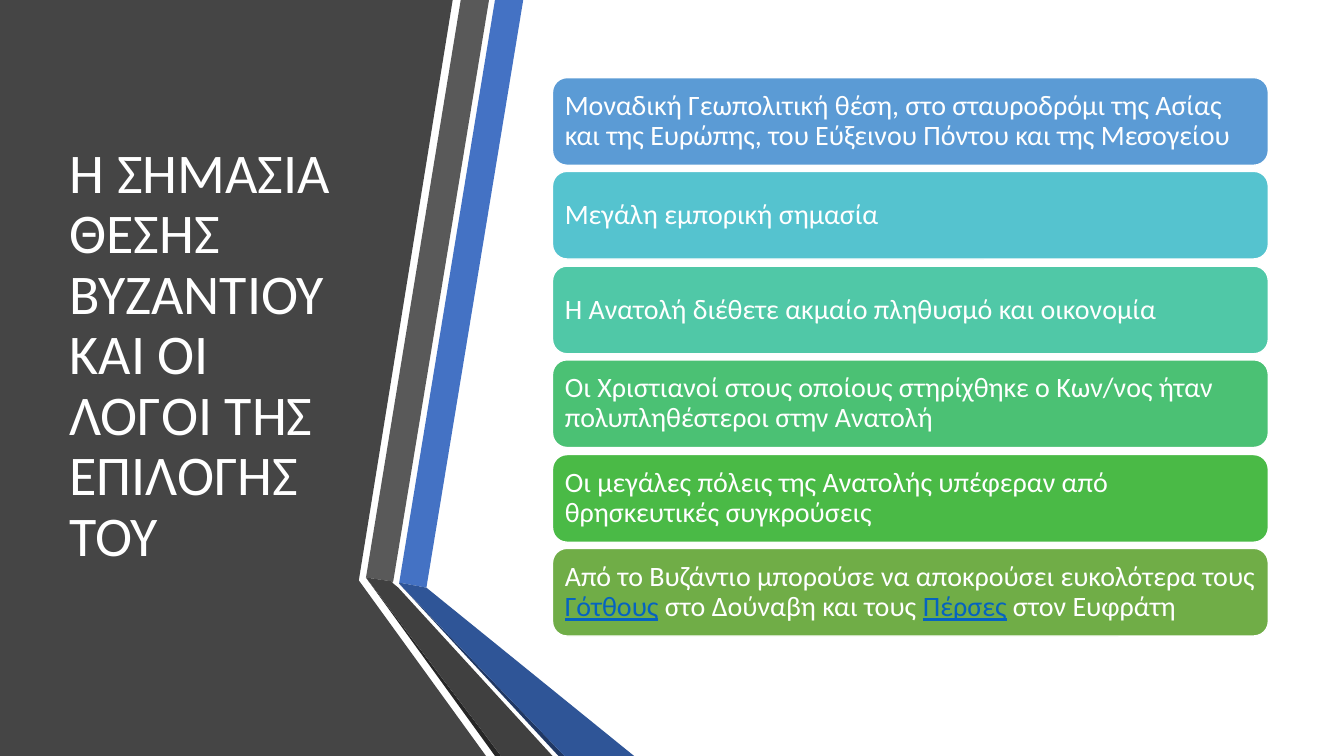
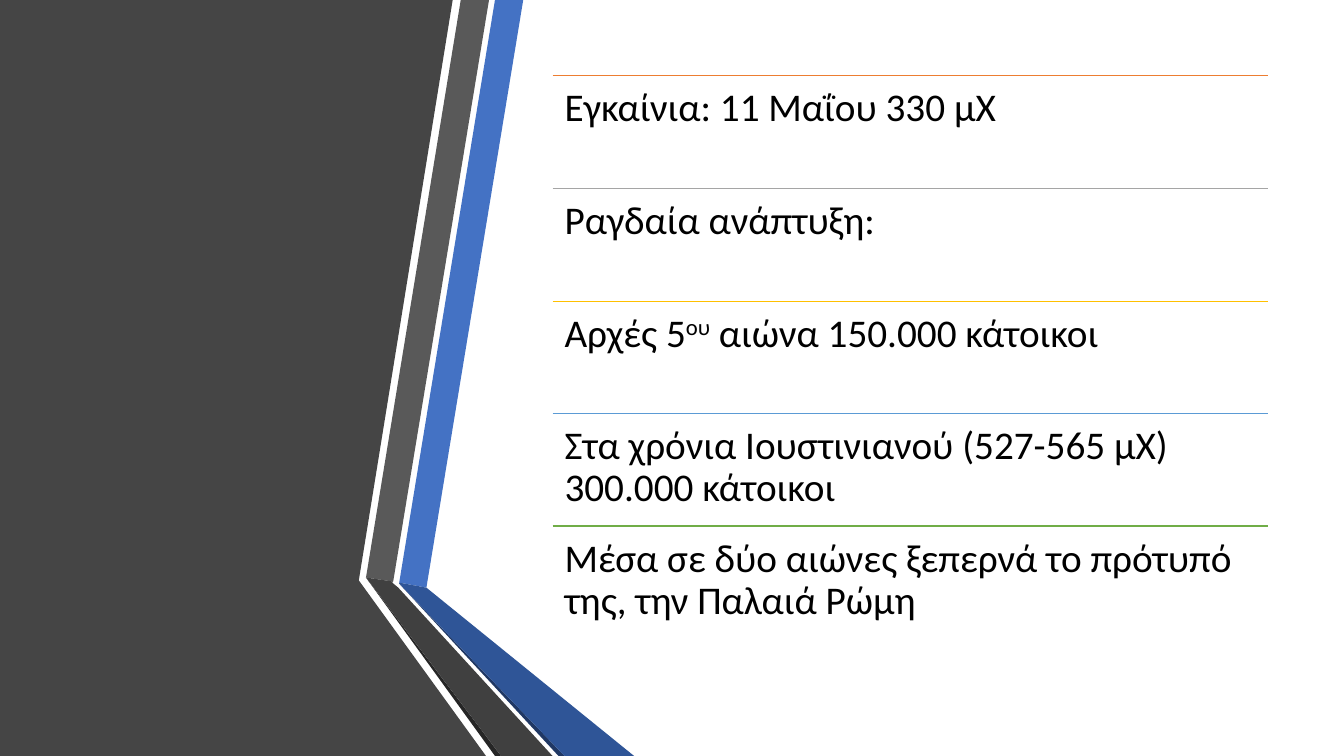
from lxml.etree import SubElement
from pptx import Presentation
from pptx.dml.color import RGBColor
from pptx.enum.shapes import MSO_CONNECTOR, MSO_SHAPE
from pptx.enum.text import MSO_ANCHOR, MSO_AUTO_SIZE, PP_ALIGN
from pptx.oxml.ns import qn
from pptx.util import Pt

PX = 9144
WIDTH, HEIGHT = 1333, 750
TITLE_ONLY, BLANK = 5, 6
FONT = "Calibri"

WHITE = RGBColor(0xFF, 0xFF, 0xFF)
BLACK = RGBColor(0x00, 0x00, 0x00)
CHARCOAL = RGBColor(0x45, 0x45, 0x45)
GRAY = RGBColor(0x59, 0x59, 0x59)
DARK_GRAY = RGBColor(0x40, 0x40, 0x40)
SHADE_GRAY = RGBColor(0x26, 0x26, 0x26)
ROYAL = RGBColor(0x44, 0x72, 0xC4)
DARK_ROYAL = RGBColor(0x2F, 0x55, 0x97)
SHADE_ROYAL = RGBColor(0x20, 0x38, 0x64)
SKY = RGBColor(0x5B, 0x9B, 0xD5)
TURQUOISE = RGBColor(0x55, 0xC3, 0xCF)
MINT = RGBColor(0x50, 0xC8, 0xA7)
EMERALD = RGBColor(0x4B, 0xC1, 0x74)
GREEN = RGBColor(0x4A, 0xBA, 0x46)
OLIVE = RGBColor(0x70, 0xAD, 0x47)
ORANGE = RGBColor(0xED, 0x7D, 0x31)
SILVER = RGBColor(0xA5, 0xA5, 0xA5)
GOLD = RGBColor(0xFF, 0xC0, 0x00)
LINK = RGBColor(0x05, 0x63, 0xC1)

BAND = [
    (CHARCOAL, [(0, 0), (449, 0), (356, 575), (356, 576), (482, 750), (0, 750)]),
    (ROYAL, [(396, 578), (423, 583), (519, 0), (491, 0)]),
    (GRAY, [(485, 0), (457, 0), (363, 573), (390, 577)]),
    (SHADE_GRAY, [(363, 573), (491, 750), (497, 750)]),
    (SHADE_ROYAL, [(396, 579), (554, 750), (560, 750)]),
    (DARK_ROYAL, [(396, 579), (560, 750), (629, 750), (423, 583), (396, 578)]),
    (DARK_GRAY, [(548, 750), (395, 583), (389, 578), (390, 577), (363, 573), (497, 750)]),
]

TITLE = "Η ΣΗΜΑΣΙΑ ΘΕΣΗΣ ΒΥΖΑΝΤΙΟΥ ΚΑΙ ΟΙ ΛΟΓΟΙ ΤΗΣ ΕΠΙΛΟΓΗΣ ΤΟΥ"

REASONS = [
    (SKY, ["Μοναδική Γεωπολιτική θέση, στο σταυροδρόμι της Ασίας και της Ευρώπης, "
           "του Εύξεινου Πόντου και της Μεσογείου"]),
    (TURQUOISE, ["Μεγάλη εμπορική σημασία"]),
    (MINT, ["Η Ανατολή διέθετε ακμαίο πληθυσμό και οικονομία"]),
    (EMERALD, ["Οι Χριστιανοί στους οποίους στηρίχθηκε ο Κων/νος ήταν "
               "πολυπληθέστεροι στην Ανατολή"]),
    (GREEN, ["Οι μεγάλες πόλεις της Ανατολής υπέφεραν από θρησκευτικές συγκρούσεις"]),
    (OLIVE, ["Από το Βυζάντιο μπορούσε να αποκρούσει ευκολότερα τους ",
             ("Γότθους", "link"), " στο Δούναβη και τους ",
             ("Πέρσες", "link"), " στον Ευφράτη"]),
]

GROWTH = [
    (ORANGE, ["Εγκαίνια: 11 Μαΐου 330 μΧ"]),
    (SILVER, ["Ραγδαία ανάπτυξη:"]),
    (GOLD, ["Αρχές 5", ("ου", "super"), " αιώνα 150.000 κάτοικοι"]),
    (SKY, ["Στα χρόνια Ιουστινιανού (527-565 μΧ) 300.000 κάτοικοι"]),
    (OLIVE, ["Μέσα σε δύο αιώνες ξεπερνά το πρότυπό της, την Παλαιά Ρώμη"]),
]


def spread(first, last, items):
    step = (last - first) / (len(items) - 1)
    return [(first + round(i * step), *item) for i, item in enumerate(items)]


class Deck:
    def __init__(self):
        self.prs = Presentation()
        self.prs.slide_width, self.prs.slide_height = WIDTH * PX, HEIGHT * PX
        self.s = None

    def slide(self, layout):
        self.s = self.prs.slides.add_slide(self.prs.slide_layouts[layout])
        for color, points in BAND:
            self.outline(color, points)

    def outline(self, color, points):
        builder = self.s.shapes.build_freeform(*points[0], scale=PX)
        builder.add_line_segments(points[1:], close=True)
        sp = builder.convert_to_shape()
        sp.shadow.inherit = False
        sp.fill.solid()
        sp.fill.fore_color.rgb = color
        sp.line.fill.background()

    def set_text(self, sp, parts, size, color, inset, anchor):
        tf = sp.text_frame
        tf.word_wrap = True
        tf.auto_size = MSO_AUTO_SIZE.NONE
        tf.vertical_anchor = anchor
        tf.margin_left = tf.margin_right = tf.margin_top = tf.margin_bottom = inset * PX
        p = tf.paragraphs[0]
        p.alignment = PP_ALIGN.LEFT
        p.line_spacing = 0.9
        p.font.name, p.font.size = FONT, Pt(size)
        p.font.color.rgb = color
        for part in parts:
            text, style = (part, None) if isinstance(part, str) else part
            r = p.add_run()
            r.text = text
            if style == "link":
                r.font.color.rgb = LINK
                r.font.underline = True
            elif style == "super":
                r._r.get_or_add_rPr().set("baseline", "30000")

    def title(self, text, x, y, w, h):
        sp = self.s.shapes.title
        self.s.shapes._spTree.append(sp._element)
        sp.left, sp.top, sp.width, sp.height = x * PX, y * PX, w * PX, h * PX
        self.set_text(sp, [text], 40, WHITE, 10, MSO_ANCHOR.MIDDLE)

    def card(self, color, parts, x, y, w, h):
        sp = self.s.shapes.add_shape(
            MSO_SHAPE.ROUNDED_RECTANGLE, x * PX, y * PX, w * PX, h * PX)
        sp.shadow.inherit = False
        sp.fill.solid()
        sp.fill.fore_color.rgb = color
        sp.line.color.rgb = WHITE
        sp.line.width = Pt(1)
        self.set_text(sp, parts, 20, WHITE, 8, MSO_ANCHOR.MIDDLE)

    def rule(self, color, x, y, w):
        line = self.s.shapes.add_connector(
            MSO_CONNECTOR.STRAIGHT, x * PX, y * PX, (x + w) * PX, y * PX)
        line.line.color.rgb = color
        line.line.width = Pt(1)
        SubElement(line._element.spPr, qn("a:effectLst"))

    def text(self, parts, x, y, w, h):
        sp = self.s.shapes.add_textbox(x * PX, y * PX, w * PX, h * PX)
        self.set_text(sp, parts, 28, BLACK, 12, MSO_ANCHOR.TOP)


def main():
    deck = Deck()
    left, width = 548, 710

    deck.slide(TITLE_ONLY)
    deck.title(TITLE, 59, 75, 304, 558)
    for y, color, parts in spread(77, 544, REASONS):
        deck.card(color, parts, left, y, width, 87)

    deck.slide(BLANK)
    for y, color, parts in spread(75, 522, GROWTH):
        deck.rule(color, left, y, width)
        deck.text(parts, left, y, width, 112)

    deck.prs.save("out.pptx")


if __name__ == "__main__":
    main()
